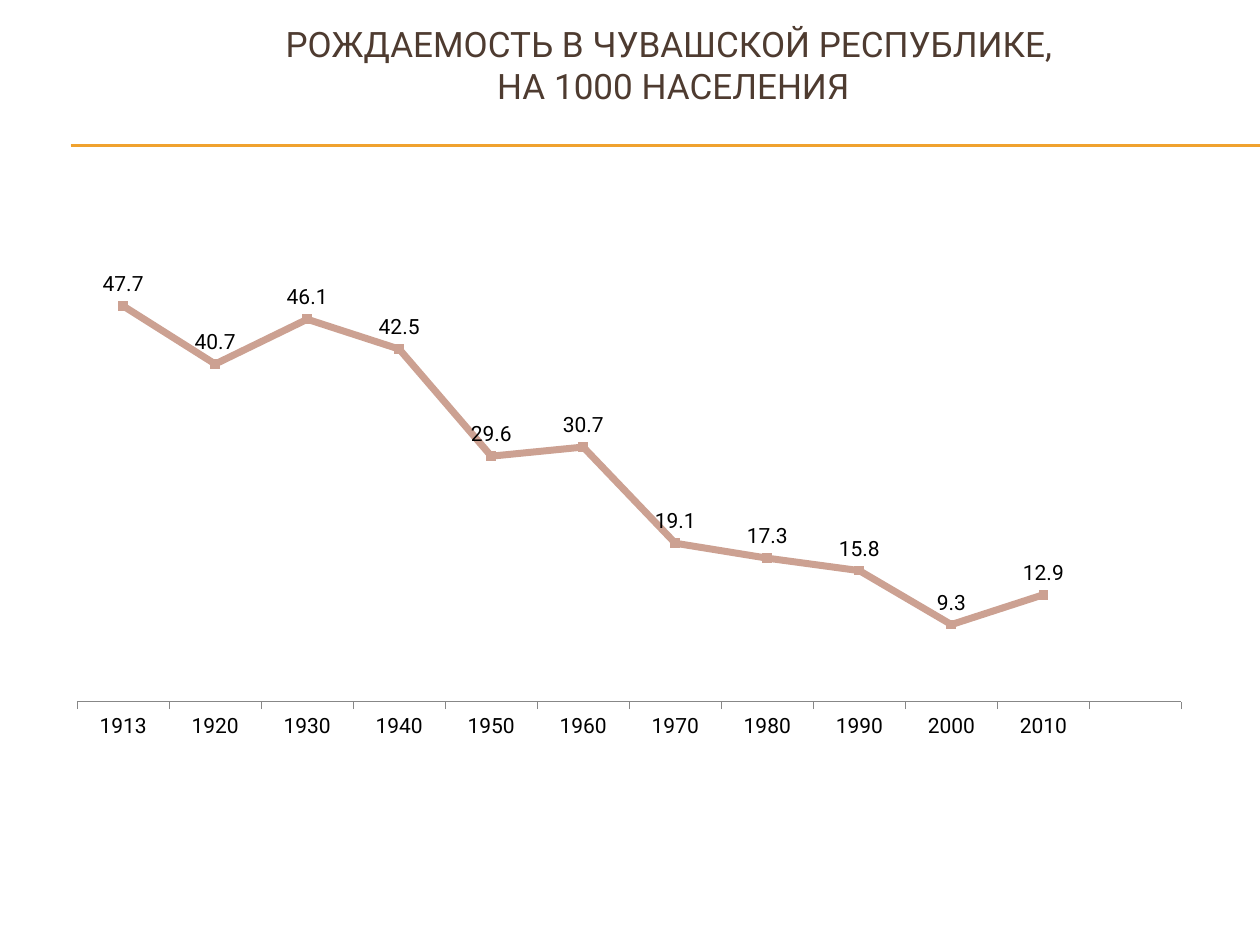
from lxml import etree
from pptx import Presentation
from pptx.chart.data import CategoryChartData
from pptx.dml.color import RGBColor
from pptx.enum import chart as ch, shapes, text
from pptx.oxml import parse_xml
from pptx.oxml.ns import nsdecls, qn
from pptx.util import Inches, Pt

ORANGE = RGBColor(0xF0, 0xA2, 0x2E)
BROWN = RGBColor(0x4E, 0x3B, 0x30)
ROSE = RGBColor(0xCC, 0xA1, 0x92)
GREY = RGBColor(0x87, 0x87, 0x87)
BLACK = RGBColor(0, 0, 0)
FONT = "Roboto"

YEARS = ["1913", *map(str, range(1920, 2011, 10)), ""]
BIRTH_RATES = [47.7, 40.7, 46.1, 42.5, 29.6, 30.7, 19.1, 17.3, 15.8, 9.3, 12.9, None]


def set_all(target, **values):
    for name, value in values.items():
        setattr(target, name, value)


def style_font(font, size, color):
    set_all(font, name=FONT, size=Pt(size), bold=False)
    font.color.rgb = color


def style_line(line, color, width):
    line.color.rgb = color
    line.width = Pt(width)


def add_rule(slide, y):
    rule = slide.shapes.add_connector(
        shapes.MSO_CONNECTOR.STRAIGHT, Inches(0.56), Inches(y), Inches(10), Inches(y))
    style_line(rule.line, ORANGE, 0.75)
    etree.SubElement(rule._element.spPr, qn("a:effectLst"))


def fill_title(slide, wording):
    title = slide.shapes.title
    set_all(title, left=Inches(1.61), top=Inches(0.21),
            width=Inches(7.4), height=Inches(0.61))
    frame = title.text_frame
    set_all(frame, text=wording, word_wrap=True,
            auto_size=text.MSO_AUTO_SIZE.NONE,
            vertical_anchor=text.MSO_ANCHOR.MIDDLE)
    para = frame.paragraphs[0]
    para.alignment = text.PP_ALIGN.CENTER
    for span in para.runs:
        style_font(span.font, 20, BROWN)


def set_plot_area(chart, **fractions):
    """Fix the inner plot area as fractions (x, y, w, h) of the chart frame."""
    sizes = "".join(f'<c:{key} val="{value}"/>' for key, value in fractions.items())
    layout = parse_xml(
        f'<c:layout {nsdecls("c")}><c:manualLayout><c:layoutTarget val="inner"/>'
        f'<c:xMode val="edge"/><c:yMode val="edge"/>{sizes}'
        '</c:manualLayout></c:layout>')
    plot_area = chart._chartSpace.chart.plotArea
    for old in plot_area.findall(qn("c:layout")):
        plot_area.remove(old)
    plot_area.insert(0, layout)


def style_axes(chart):
    years = chart.category_axis
    set_all(years, major_tick_mark=ch.XL_TICK_MARK.OUTSIDE, has_major_gridlines=False)
    style_font(years.tick_labels.font, 12, BLACK)
    style_line(years.format.line, GREY, 0.75)
    set_all(chart.value_axis, visible=False, has_major_gridlines=False,
            minimum_scale=0, maximum_scale=60)


def style_series(series):
    series.smooth = False
    style_line(series.format.line, ROSE, 4)
    marker = series.marker
    set_all(marker, style=ch.XL_MARKER_STYLE.SQUARE, size=5)
    marker.format.fill.solid()
    marker.format.fill.fore_color.rgb = ROSE
    marker.format.line.color.rgb = ROSE
    labels = series.data_labels
    set_all(labels, show_value=True, position=ch.XL_LABEL_POSITION.ABOVE,
            number_format="0.0", number_format_is_linked=False)
    style_font(labels.font, 12, BLACK)


def add_birth_rate_chart(slide):
    data = CategoryChartData(number_format="0.0")
    data.categories = YEARS
    data.add_series("Series 1", BIRTH_RATES)
    chart = slide.shapes.add_chart(
        ch.XL_CHART_TYPE.LINE_MARKERS, Inches(0.43), Inches(1.53),
        Inches(9.13), Inches(4.44), data).chart
    set_all(chart, has_legend=False, has_title=False)
    style_font(chart.font, 18, BLACK)
    chart.plots[0].vary_by_categories = False
    set_plot_area(chart, x=0.02, y=0.02, w=0.96, h=0.89)
    style_axes(chart)
    style_series(chart.plots[0].series[0])


def main():
    deck = Presentation()
    set_all(deck, slide_width=Inches(10), slide_height=Inches(7.5))
    slide = deck.slides.add_slide(deck.slide_layouts[5])
    for y in (1.15, 1.16):
        add_rule(slide, y)
    fill_title(slide, "РОЖДАЕМОСТЬ В ЧУВАШСКОЙ РЕСПУБЛИКЕ,\v НА 1000 НАСЕЛЕНИЯ")
    add_birth_rate_chart(slide)
    deck.save("out.pptx")


if __name__ == "__main__":
    main()
